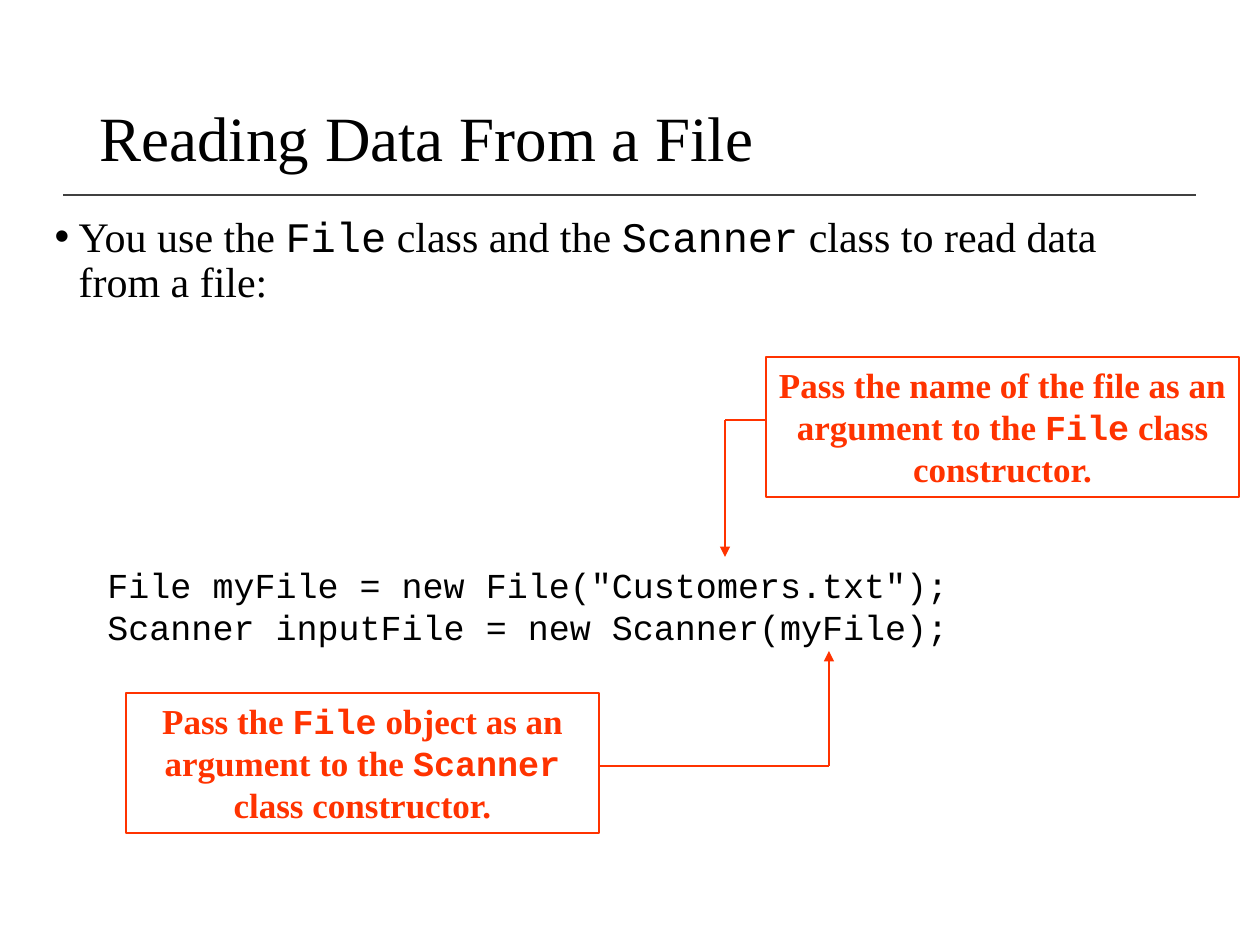
"""Builds the slide "Reading Data From a File"."""
from dataclasses import dataclass
from itertools import pairwise

from lxml.etree import SubElement
from pptx import Presentation
from pptx.dml.color import RGBColor
from pptx.enum.shapes import MSO_CONNECTOR as Connector, MSO_SHAPE as Shape
from pptx.enum.text import MSO_ANCHOR as Anchor, PP_ALIGN as Align
from pptx.oxml.ns import qn
from pptx.util import Emu, Pt

PX_PER_INCH = 126


def px(length):
    return Emu(round(length * 914400 / PX_PER_INCH))


@dataclass(frozen=True)
class Theme:
    text_font: str = "Times New Roman"
    code_font: str = "Courier New"
    ink: RGBColor = RGBColor(0x00, 0x00, 0x00)
    rule: RGBColor = RGBColor(0x40, 0x40, 0x40)
    accent: RGBColor = RGBColor(0xFF, 0x33, 0x00)
    title_size: int = 36
    body_size: int = 24
    note_size: int = 20
    rule_width: float = 1
    accent_width: float = 0.75


class SlideBuilder:
    def __init__(self, slide, theme):
        self.slide = slide
        self.theme = theme

    def add_runs(self, paragraph, text, size, color, bold=False):
        for index, piece in enumerate(text.split("`")):
            if piece:
                run = paragraph.add_run()
                run.text = piece
                run.font.name = self.theme.code_font if index % 2 else self.theme.text_font
                run.font.size = Pt(size)
                run.font.color.rgb = color
                run.font.bold = bold

    def place(self, shape, box):
        shape.left, shape.top, shape.width, shape.height = map(px, box)

    def title(self, text, box):
        shape = self.slide.shapes.title
        self.place(shape, box)
        shape.text_frame.vertical_anchor = Anchor.MIDDLE
        paragraph = shape.text_frame.paragraphs[0]
        paragraph.alignment = Align.LEFT
        paragraph.line_spacing = 0.9
        self.add_runs(paragraph, text, self.theme.title_size, self.theme.ink)

    def bullet(self, text, box, indent):
        shape = self.slide.placeholders[1]
        self.place(shape, box)
        paragraph = shape.text_frame.paragraphs[0]
        paragraph.line_spacing = 0.9
        paragraph.space_before = Pt(7.5)
        properties = paragraph._p.get_or_add_pPr()
        properties.set("marL", str(px(indent)))
        properties.set("indent", str(-px(indent)))
        SubElement(properties, qn("a:buChar"), char="•")
        self.add_runs(paragraph, text, self.theme.body_size, self.theme.ink)

    def code(self, lines, box):
        frame = self.slide.shapes.add_textbox(*map(px, box)).text_frame
        frame.word_wrap = True
        for index, line in enumerate(lines):
            paragraph = frame.add_paragraph() if index else frame.paragraphs[0]
            self.add_runs(paragraph, f"`{line}`", self.theme.note_size, self.theme.ink)

    def callout(self, text, box):
        shape = self.slide.shapes.add_shape(Shape.RECTANGLE, *map(px, box))
        shape.shadow.inherit = False
        shape.fill.background()
        shape.line.color.rgb = self.theme.accent
        shape.line.width = Pt(self.theme.accent_width)
        frame = shape.text_frame
        frame.word_wrap = True
        frame.vertical_anchor = Anchor.TOP
        paragraph = frame.paragraphs[0]
        paragraph.alignment = Align.CENTER
        self.add_runs(paragraph, text, self.theme.note_size, self.theme.accent, bold=True)

    def line(self, start, end, color, width):
        connector = self.slide.shapes.add_connector(
            Connector.STRAIGHT, *map(px, (*start, *end)))
        connector.line.color.rgb = color
        connector.line.width = Pt(width)
        SubElement(connector._element.spPr, qn("a:effectLst"))
        return connector

    def arrow(self, *points):
        for start, end in pairwise(points):
            connector = self.line(start, end, self.theme.accent, self.theme.accent_width)
        SubElement(connector.line._get_or_add_ln(), qn("a:tailEnd"), type="triangle")


def main():
    presentation = Presentation()
    presentation.slide_width = px(1260)
    presentation.slide_height = px(945)
    theme = Theme()
    slide = presentation.slides.add_slide(presentation.slide_layouts[1])
    builder = SlideBuilder(slide, theme)

    builder.line((63, 195), (1196, 195), theme.rule, theme.rule_width)
    builder.title("Reading Data From a File", (87, 50, 1086, 183))
    builder.bullet("You use the `File` class and the `Scanner` class to read data from a file:",
                   (42, 210, 1144, 210), indent=24)
    builder.code(['File myFile = new File("Customers.txt");',
                  "Scanner inputFile = new Scanner(myFile);"], (95, 557, 903, 97))
    builder.callout("Pass the name of the file as an argument to the `File` class constructor.",
                    (766, 357, 473, 140))
    builder.callout("Pass the `File` object as an argument to the `Scanner` class constructor.",
                    (126, 693, 473, 140))
    builder.arrow((766, 420), (725, 420), (725, 557))
    builder.arrow((599, 766), (829, 766), (829, 651))
    presentation.save("out.pptx")


if __name__ == "__main__":
    main()
